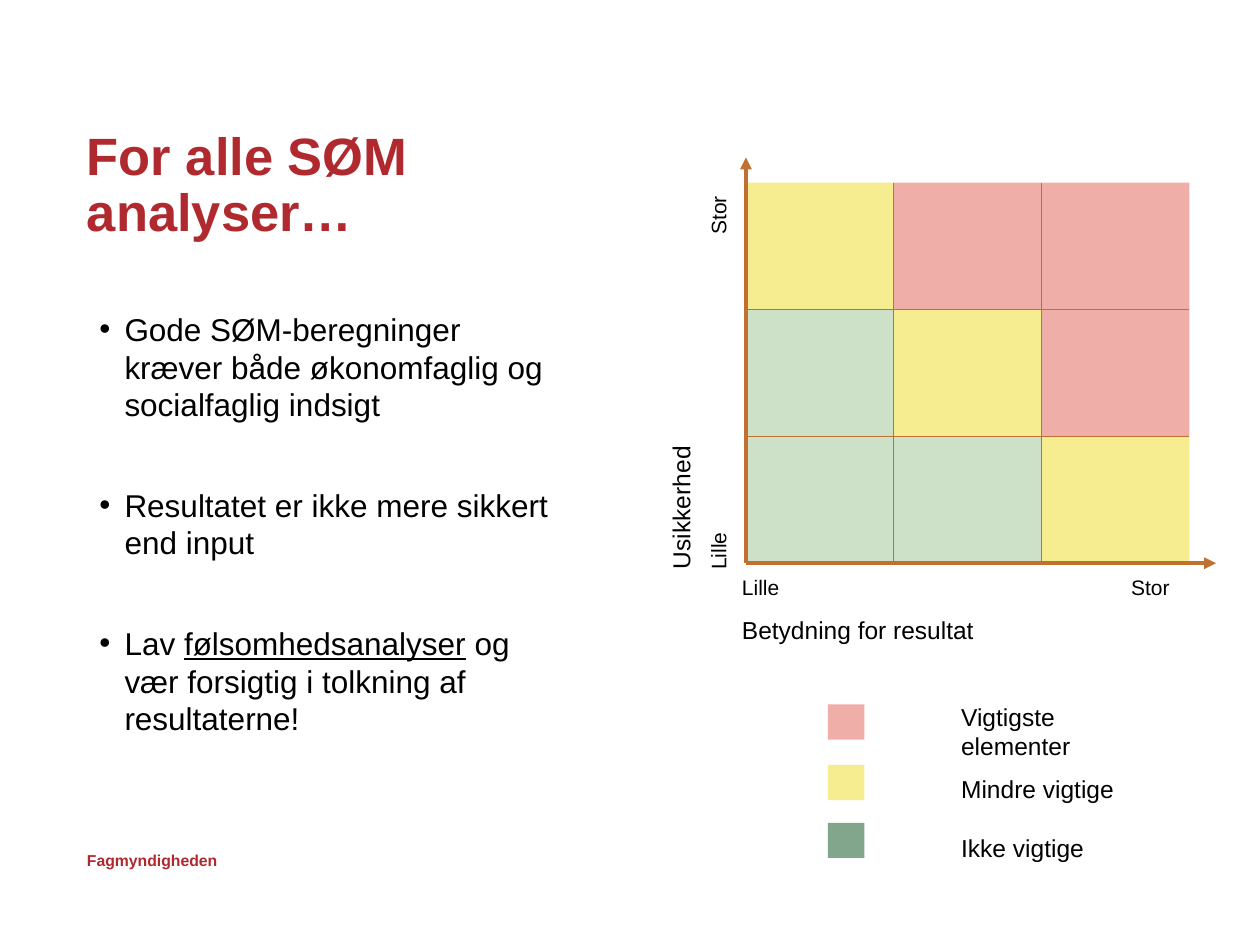
from lxml import etree
from pptx import Presentation
from pptx.dml.color import RGBColor
from pptx.enum.shapes import MSO_CONNECTOR, MSO_SHAPE
from pptx.enum.text import MSO_ANCHOR
from pptx.oxml.ns import qn
from pptx.util import Inches, Pt

RECTANGLE = MSO_SHAPE.RECTANGLE
STRAIGHT = MSO_CONNECTOR.STRAIGHT
TOP = MSO_ANCHOR.TOP

RED, YELLOW, PALE_GREEN, GREEN = "F0AEA9", "F6EC90", "CCE1C7", "82A68B"
BRAND_RED, ORANGE, BLACK = "AF292E", "C27030", "000000"

MATRIX = [
    [YELLOW, RED, RED],
    [PALE_GREEN, YELLOW, RED],
    [PALE_GREEN, PALE_GREEN, YELLOW],
]
BULLETS = [
    [("Gode SØM-beregninger kræver både økonomfaglig og socialfaglig indsigt", False)],
    [("Resultatet er ikke mere sikkert end input", False)],
    [("Lav ", False), ("følsomhedsanalyser", True),
     (" og vær forsigtig i tolkning af resultaterne!", False)],
]
AXIS_LABELS = [
    ("Betydning for resultat", (5.79, 4.83, 4.1, 0.3), 14, 0),
    ("Lille", (5.79, 4.51, 1.15, 0.27), 12, 0),
    ("Stor", (8.88, 4.51, 1.1, 0.27), 12, 0),
    ("Lille", (5.19, 3.99, 0.99, 0.27), 12, 270),
    ("Stor", (5.19, 1.33, 0.99, 0.27), 12, 270),
    ("Usikkerhed", (3.44, 2.52, 3.89, 0.3), 14, 270),
]
LEGEND = [
    ("Vigtigste elementer", RED, 0.07, 0, 0.57),
    ("Mindre vigtige", YELLOW, 0.55, 0.57, 0.34),
    ("Ikke vigtige", GREEN, 1.01, 1.04, 0.34),
]


def color(value):
    return RGBColor.from_string(value)


def set_values(target, values):
    for name, value in values.items():
        setattr(target, name, value)


def add_frame(page, box, inset=None, rotation=0):
    shape = page.shapes.add_textbox(*map(Inches, box))
    shape.rotation = rotation
    frame = shape.text_frame
    set_values(frame, {"word_wrap": True, "vertical_anchor": TOP})
    if inset is not None:
        sides = ("left", "top", "right", "bottom")
        set_values(frame, {f"margin_{side}": Inches(inset) for side in sides})
    return frame


def add_span(para, text, size, fill=BLACK, bold=False, underline=False):
    span = para.add_run()
    span.text = text
    set_values(span.font, {"name": "Arial", "size": Pt(size), "bold": bold,
                           "underline": underline})
    span.font.color.rgb = color(fill)


def add_label(page, box, text, size, fill=BLACK, bold=False, inset=None, rotation=0):
    para = add_frame(page, box, inset, rotation).paragraphs[0]
    add_span(para, text, size, fill, bold)
    return para


def add_tile(page, box, fill):
    tile = page.shapes.add_shape(RECTANGLE, *map(Inches, box))
    tile.shadow.inherit = False
    tile.fill.solid()
    tile.fill.fore_color.rgb = color(fill)
    tile.line.fill.background()


def add_line(page, start, end, width, arrow=False):
    line = page.shapes.add_connector(STRAIGHT, *map(Inches, start + end))
    line.line.color.rgb = color(ORANGE)
    line.line.width = Pt(width)
    if arrow:
        etree.SubElement(line.line._get_or_add_ln(), qn("a:tailEnd"), type="triangle")
    etree.SubElement(line._element.spPr, qn("a:effectLst"))


def add_bullets(page, box):
    frame = add_frame(page, box)
    for index, spans in enumerate(BULLETS):
        para = frame.add_paragraph() if index else frame.paragraphs[0]
        para.space_before = Pt(35.7 if index else 0)
        properties = para._p.get_or_add_pPr()
        properties.set("marL", str(Inches(0.2)))
        properties.set("indent", str(Inches(-0.2)))
        etree.SubElement(properties, qn("a:buFont"), typeface="Arial")
        etree.SubElement(properties, qn("a:buChar"), char="•")
        for text, underline in spans:
            add_span(para, text, 18, underline=underline)


def add_matrix(page, box):
    left, top, width, height = box
    right, bottom = left + width, top + height
    cell_width, cell_height = width / len(MATRIX[0]), height / len(MATRIX)
    for row, fills in enumerate(MATRIX):
        for column, fill in enumerate(fills):
            add_tile(page, (left + column * cell_width, top + row * cell_height,
                            cell_width, cell_height), fill)
    add_line(page, (left, bottom), (left, top - 0.2), 2.25, arrow=True)
    add_line(page, (left, bottom), (right + 0.21, bottom), 2.25, arrow=True)
    for column in range(1, len(MATRIX[0])):
        x = left + column * cell_width
        add_line(page, (x, top), (x, bottom), 0.5)
    for row in range(1, len(MATRIX)):
        y = top + row * cell_height
        add_line(page, (right, y), (left + 0.02, y), 0.5)
    for text, label_box, size, rotation in AXIS_LABELS:
        add_label(page, label_box, text, size, rotation=rotation)


def add_legend(page, box):
    left, top, width, _ = box
    text_left = left + 0.96
    for text, fill, tile_offset, text_offset, text_height in LEGEND:
        add_tile(page, (left, top + tile_offset, 0.29, 0.28), fill)
        add_label(page, (text_left, top + text_offset, left + width - text_left,
                         text_height), text, 14)


def main():
    deck = Presentation()
    deck.slide_width, deck.slide_height = Inches(10), Inches(7.5)
    page = deck.slides.add_slide(deck.slide_layouts[6])
    add_label(page, (0.69, 6.75, 1.4, 0.15), "Fagmyndigheden", 9, BRAND_RED, True, 0)
    add_bullets(page, (0.69, 2.41, 3.8, 4.02))
    title = add_label(page, (0.69, 1.03, 3.8, 1.14), "For alle SØM analyser…",
                      30, BRAND_RED, True, 0)
    title.line_spacing = 0.9
    add_matrix(page, (5.92, 1.45, 3.52, 3.02))
    add_legend(page, (6.57, 5.52, 2.76, 1.38))
    deck.save("out.pptx")


if __name__ == "__main__":
    main()
